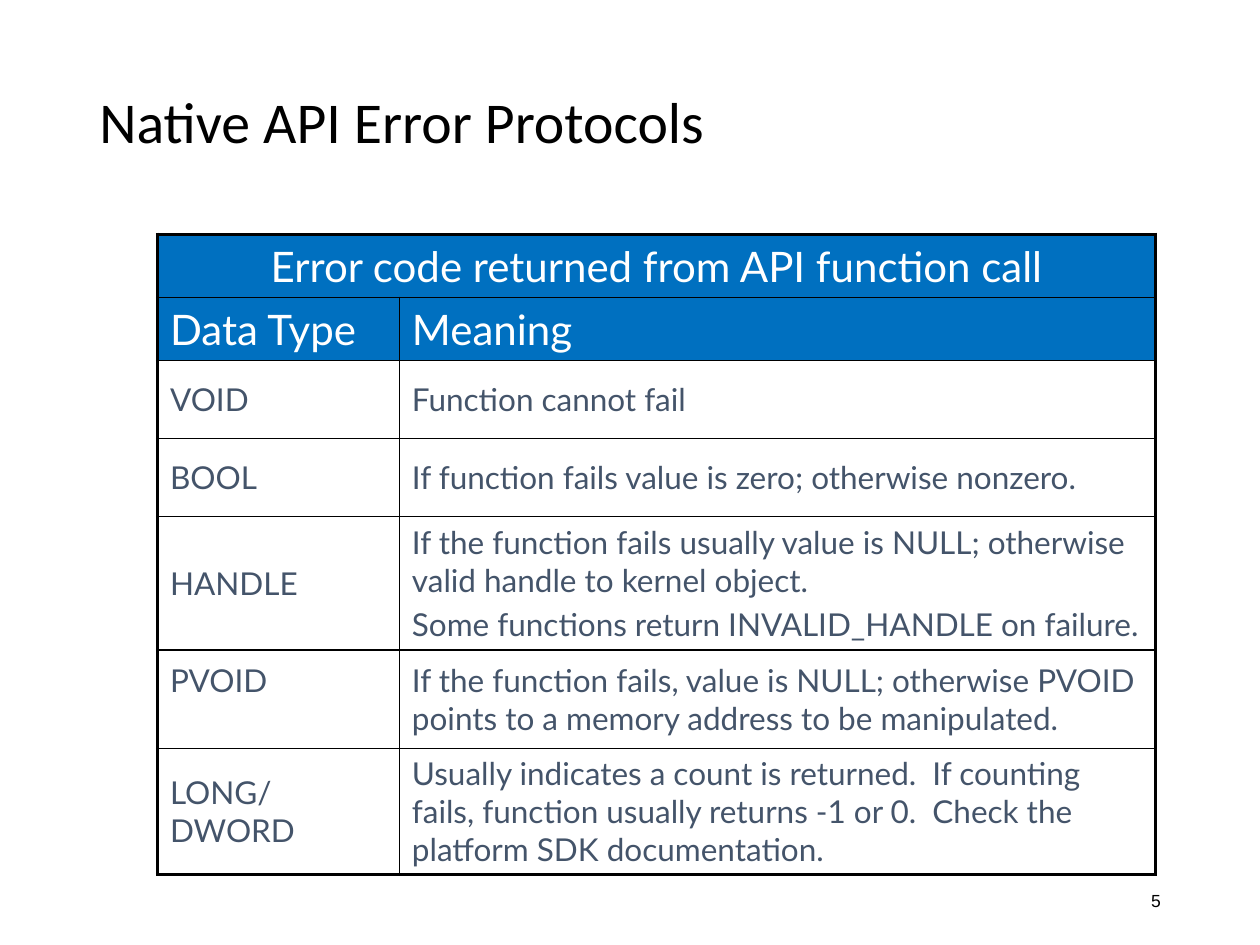
from pptx import Presentation
from pptx.dml.color import RGBColor
from pptx.enum.text import MSO_ANCHOR, PP_ALIGN
from pptx.oxml import parse_xml
from pptx.oxml.ns import nsdecls
from pptx.util import Inches, Pt

COLORS = {"black": "000000", "white": "FFFFFF", "header": "0070C0", "body": "44546A"}
THIN, THICK = 1, 2.25
COLUMN_WIDTHS = [1.92, 6]
ROW_HEIGHTS = [0.5, 0.5, 0.62, 0.62, 1.06, 0.78, 1]
HEADER_ROWS = 2
ROWS = [
    ["Error code returned from API function call", ""],
    ["Data Type", "Meaning"],
    ["VOID", "Function cannot fail"],
    ["BOOL", "If function fails value is zero; otherwise nonzero."],
    ["HANDLE", "If the function fails usually value is NULL; otherwise valid handle to kernel object.\n"
               "Some functions return INVALID_HANDLE on failure."],
    ["PVOID", "If the function fails, value is NULL; otherwise PVOID points to a memory address "
              "to be manipulated."],
    ["LONG/DWORD", "Usually indicates a count is returned.  If counting fails, function usually "
                   "returns -1 or 0.  Check the platform SDK documentation."],
]


def style_text(text_frame, font_name, size, color, alignment=PP_ALIGN.LEFT):
    for paragraph in text_frame.paragraphs:
        paragraph.alignment = alignment
        paragraph.font.name = font_name
        paragraph.font.size = Pt(size)
        paragraph.font.color.rgb = RGBColor.from_string(COLORS[color])


def set_borders(cell, widths):
    """Draw black cell borders; widths maps L, R, T and B to points."""
    properties = cell._tc.get_or_add_tcPr()
    for position, (side, width) in enumerate(widths.items()):
        properties.insert(position, parse_xml(
            f'<a:ln{side} {nsdecls("a")} w="{Pt(width)}"><a:solidFill>'
            f'<a:srgbClr val="{COLORS["black"]}"/></a:solidFill></a:ln{side}>'))


presentation = Presentation()
presentation.slide_width, presentation.slide_height = Inches(10), Inches(7.5)
slide = presentation.slides.add_slide(presentation.slide_layouts[6])

labels = [
    ("Native API Error Protocols", (0.69, 0.4, 8.62, 1.18), "Calibri", 33, PP_ALIGN.LEFT, 0.9),
    ("5", (7.06, 6.95, 2.25, 0.4), "Arial", 10, PP_ALIGN.RIGHT, 1.0),
]
for text, box, font_name, size, alignment, line_spacing in labels:
    text_frame = slide.shapes.add_textbox(*map(Inches, box)).text_frame
    text_frame.word_wrap = True
    text_frame.vertical_anchor = MSO_ANCHOR.MIDDLE
    text_frame.text = text
    text_frame.paragraphs[0].line_spacing = line_spacing
    style_text(text_frame, font_name, size, "black", alignment)

table = slide.shapes.add_table(
    len(ROWS), len(COLUMN_WIDTHS), Inches(1.25), Inches(1.86),
    Inches(sum(COLUMN_WIDTHS)), Inches(sum(ROW_HEIGHTS))).table
for column, width in zip(table.columns, COLUMN_WIDTHS):
    column.width = Inches(width)
for row, height in zip(table.rows, ROW_HEIGHTS):
    row.height = Inches(height)
table.cell(0, 0).merge(table.cell(0, 1))

last_row, last_column = len(ROWS) - 1, len(COLUMN_WIDTHS) - 1
for row_index, texts in enumerate(ROWS):
    is_header = row_index < HEADER_ROWS
    size = 24 if is_header else 18
    for column_index, text in enumerate(texts):
        cell = table.cell(row_index, column_index)
        if not cell.is_spanned:
            cell.text = text
            style_text(cell.text_frame, "Lato", size, "white" if is_header else "body",
                       PP_ALIGN.CENTER if cell.is_merge_origin else PP_ALIGN.LEFT)
            for paragraph in cell.text_frame.paragraphs:
                paragraph.space_before = Pt(size * 0.2)
        cell.vertical_anchor = MSO_ANCHOR.MIDDLE
        if is_header:
            cell.fill.solid()
            cell.fill.fore_color.rgb = RGBColor.from_string(COLORS["header"])
        else:
            cell.fill.background()
        set_borders(cell, {
            "L": THICK if column_index == 0 else THIN,
            "R": THICK if column_index == last_column or cell.is_merge_origin else THIN,
            "T": THICK if row_index == 0 else THIN,
            "B": THICK if row_index == last_row else THIN,
        })

# PVOID lines up with the first line of its meaning
pvoid_cell = table.cell(5, 0)
pvoid_cell.vertical_anchor = MSO_ANCHOR.TOP
pvoid_cell.margin_top = Inches(0.09)

presentation.save("out.pptx")
